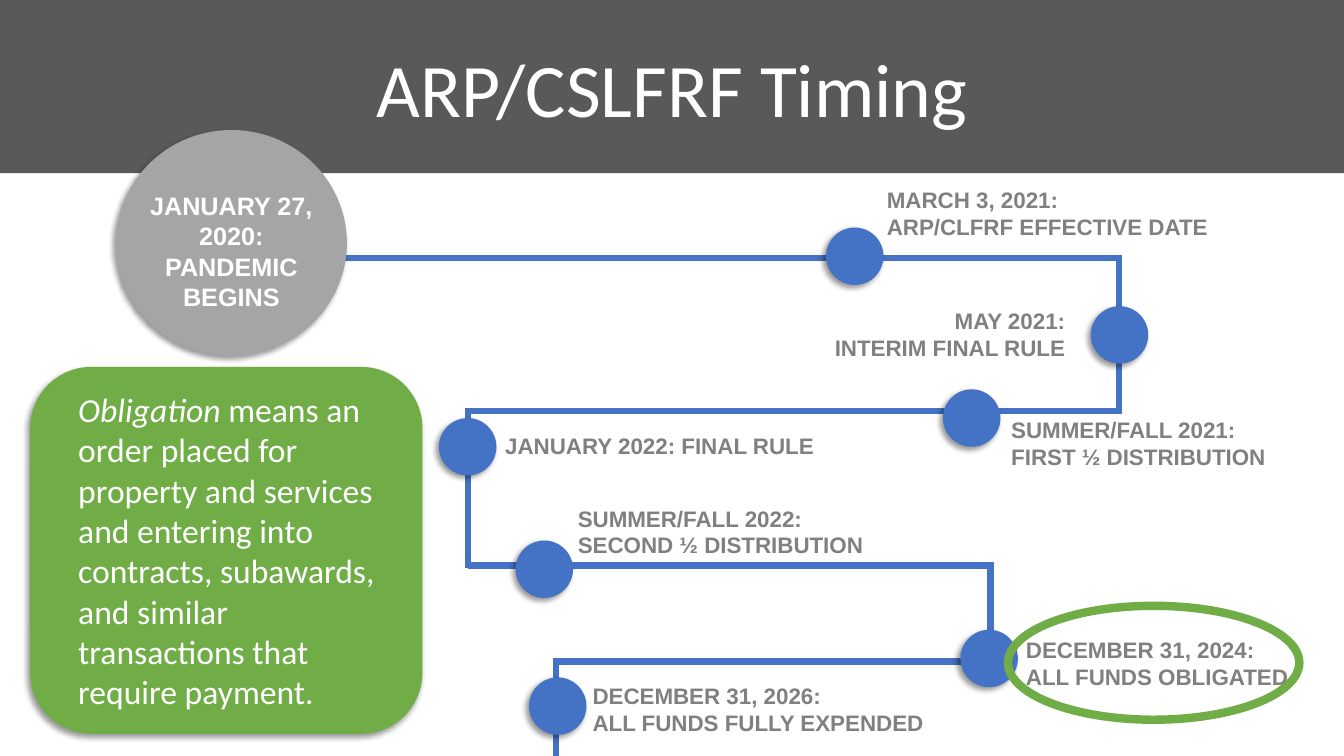
from dataclasses import dataclass
from itertools import pairwise

from lxml.etree import SubElement
from pptx import Presentation
from pptx.dml.color import RGBColor
from pptx.enum.shapes import MSO_CONNECTOR as Link, MSO_SHAPE as Preset
from pptx.enum.text import MSO_ANCHOR as Anchor, MSO_AUTO_SIZE as Fit, PP_ALIGN as Align
from pptx.oxml.ns import qn
from pptx.util import Inches, Pt

COLORS = {
    "band": "595959",
    "track": "4472C4",
    "start": "A5A5A5",
    "accent": "70AD47",
    "label": "808080",
    "white": "FFFFFF",
}
SLIDE_WIDTH, SLIDE_HEIGHT = Inches(13.33), Inches(7.5)
DOT_SIZE = Inches(0.57)
CORNER_OVERLAP = 0.4  # closes the corners of the track, percent of the height


@dataclass(frozen=True)
class Box:
    """Left, top, width and height in percent of the slide's size."""
    left: float
    top: float
    width: float
    height: float

    def emu(self) -> tuple[int, int, int, int]:
        return across(self.left), down(self.top), across(self.width), down(self.height)


@dataclass(frozen=True)
class Milestone:
    """A dot, by its centre in percent, with its label."""
    dot: tuple[float, float]
    label: Box
    lines: tuple[str, ...]
    aligns: tuple[Align, ...] = (Align.LEFT, Align.LEFT)
    wrap: bool = True


TRACK = [
    (22.5, 34.1), (83.25, 34.1), (83.25, 54.4), (34.8, 54.4), (34.8, 74.8),
    (73.7, 74.8), (73.7, 87.5), (41.35, 87.5), (41.35, 99.6),
]
MILESTONES = [
    Milestone((63.6, 33.9), Box(65.25, 24, 27.9, 8.5),
              ("MARCH 3, 2021:", "ARP/CLFRF EFFECTIVE DATE"),
              (Align.LEFT, Align.CENTER), wrap=False),
    Milestone((83.3, 44.3), Box(60.6, 40, 19.4, 8.5),
              ("MAY 2021:", "INTERIM FINAL RULE"), (Align.RIGHT, Align.RIGHT)),
    Milestone((72.3, 55.3), Box(74.5, 54.4, 20.8, 8.5),
              ("SUMMER/FALL 2021:", "FIRST ½ DISTRIBUTION")),
    Milestone((34.8, 59.1), Box(36.85, 56.5, 25, 4.9), ("JANUARY 2022: FINAL RULE",)),
    Milestone((40.5, 75.3), Box(42.25, 66.1, 23, 8.5),
              ("SUMMER/FALL 2022:", "SECOND ½ DISTRIBUTION"), wrap=False),
    Milestone((73.6, 87.1), Box(75.6, 83.5, 24.2, 8.5),
              ("DECEMBER 31, 2024:", "ALL FUNDS OBLIGATED")),
    Milestone((41.5, 93.4), Box(43.35, 89.6, 28.1, 8.5),
              ("DECEMBER 31, 2026:", "ALL FUNDS FULLY EXPENDED"),
              (Align.LEFT, Align.CENTER), wrap=False),
]


def across(percent: float) -> int:
    return round(SLIDE_WIDTH * percent / 100)


def down(percent: float) -> int:
    return round(SLIDE_HEIGHT * percent / 100)


def color(name: str) -> RGBColor:
    return RGBColor.from_string(COLORS[name])


def add_run(paragraph, text: str, size: float, font: str, ink: str,
            bold: bool = False, italic: bool = False) -> None:
    run = paragraph.add_run()
    run.text = text
    run.font.size, run.font.name = Pt(size), font
    run.font.bold, run.font.italic = bold, italic
    run.font.color.rgb = color(ink)


def add_filled(slide, preset: Preset, place: tuple[int, int, int, int], fill: str):
    shape = slide.shapes.add_shape(preset, *place)
    shape.shadow.inherit = False
    shape.fill.solid()
    shape.fill.fore_color.rgb = color(fill)
    shape.line.fill.background()
    return shape


def cast_shadow(shape) -> None:
    effects = shape.element.spPr.find(qn("a:effectLst"))
    shadow = SubElement(effects, qn("a:outerShdw"), blurRad=str(Pt(4)), dist=str(Pt(3)),
                        dir=str(135 * 60000), algn="ctr", rotWithShape="0")
    black = SubElement(shadow, qn("a:srgbClr"), val="000000")
    SubElement(black, qn("a:alpha"), val="40000")


def add_label(slide, box: Box, lines: tuple[str, ...], aligns: tuple[Align, ...],
              size: float, ink: str, wrap: bool = True) -> None:
    frame = slide.shapes.add_textbox(*box.emu()).text_frame
    frame.word_wrap = wrap
    frame.auto_size = Fit.SHAPE_TO_FIT_TEXT
    for index, (line, align) in enumerate(zip(lines, aligns)):
        paragraph = frame.add_paragraph() if index else frame.paragraphs[0]
        paragraph.alignment = align
        add_run(paragraph, line, size, "Arial", ink, bold=True)


def add_heading(slide) -> None:
    title = slide.shapes.title
    band = add_filled(slide, Preset.RECTANGLE, Box(0, 0, 100, 22.9).emu(), "band")
    title.element.addprevious(band.element)
    title.left, title.top, title.width, title.height = Box(5.7, 5.7, 88.65, 11.6).emu()
    title.text_frame.vertical_anchor = Anchor.MIDDLE
    heading = title.text_frame.paragraphs[0]
    heading.alignment = Align.CENTER
    add_run(heading, "ARP/CSLFRF Timing", 54, "Calibri", "white")


def add_track(slide) -> None:
    for (x1, y1), (x2, y2) in pairwise(TRACK):
        overlap = CORNER_OVERLAP if x1 == x2 else 0
        segment = slide.shapes.add_connector(
            Link.STRAIGHT, across(x1), down(y1 - overlap), across(x2), down(y2 + overlap))
        segment.line.color.rgb = color("track")
        segment.line.width = Pt(4.5)
        SubElement(segment.element.spPr, qn("a:effectLst"))


def add_start(slide) -> None:
    circle = add_filled(slide, Preset.OVAL, Box(8.63, 17.2, 17.18, 29.87).emu(), "start")
    cast_shadow(circle)
    add_label(slide, Box(10.2, 24.53, 14.03, 17.47),
              ("JANUARY 27,", "2020:", "PANDEMIC BEGINS"), (Align.CENTER,) * 3, 18, "white")


def add_milestone(slide, milestone: Milestone) -> None:
    x, y = milestone.dot
    corner = across(x) - DOT_SIZE // 2, down(y) - DOT_SIZE // 2
    cast_shadow(add_filled(slide, Preset.OVAL, (*corner, DOT_SIZE, DOT_SIZE), "track"))
    add_label(slide, milestone.label, milestone.lines, milestone.aligns, 16, "label",
              milestone.wrap)


def add_definition(slide) -> None:
    card = add_filled(slide, Preset.ROUNDED_RECTANGLE,
                      Box(2.25, 48.53, 29.18, 48.53).emu(), "accent")
    cast_shadow(card)
    card.text_frame.word_wrap = True
    card.text_frame.vertical_anchor = Anchor.MIDDLE
    definition = card.text_frame.paragraphs[0]
    definition.alignment = Align.LEFT
    definition._p.get_or_add_pPr().set("marL", str(Inches(0.2)))
    add_run(definition, "Obligation ", 24, "Calibri", "white", italic=True)
    add_run(definition, "means an order placed for property and services and entering into "
            "contracts, subawards, and similar transactions that require payment.",
            24, "Calibri", "white")


def add_deadline_ring(slide) -> None:
    ring = slide.shapes.add_shape(Preset.OVAL, *Box(75, 80.13, 21.68, 15.07).emu())
    ring.shadow.inherit = False
    ring.fill.background()
    ring.line.color.rgb = color("accent")
    ring.line.width = Pt(6)


def main() -> None:
    deck = Presentation()
    deck.slide_width, deck.slide_height = SLIDE_WIDTH, SLIDE_HEIGHT
    slide = deck.slides.add_slide(deck.slide_layouts.get_by_name("Title Only"))
    add_heading(slide)
    add_track(slide)
    add_start(slide)
    for milestone in MILESTONES:
        add_milestone(slide, milestone)
    add_definition(slide)
    add_deadline_ring(slide)
    deck.save("out.pptx")


if __name__ == "__main__":
    main()
